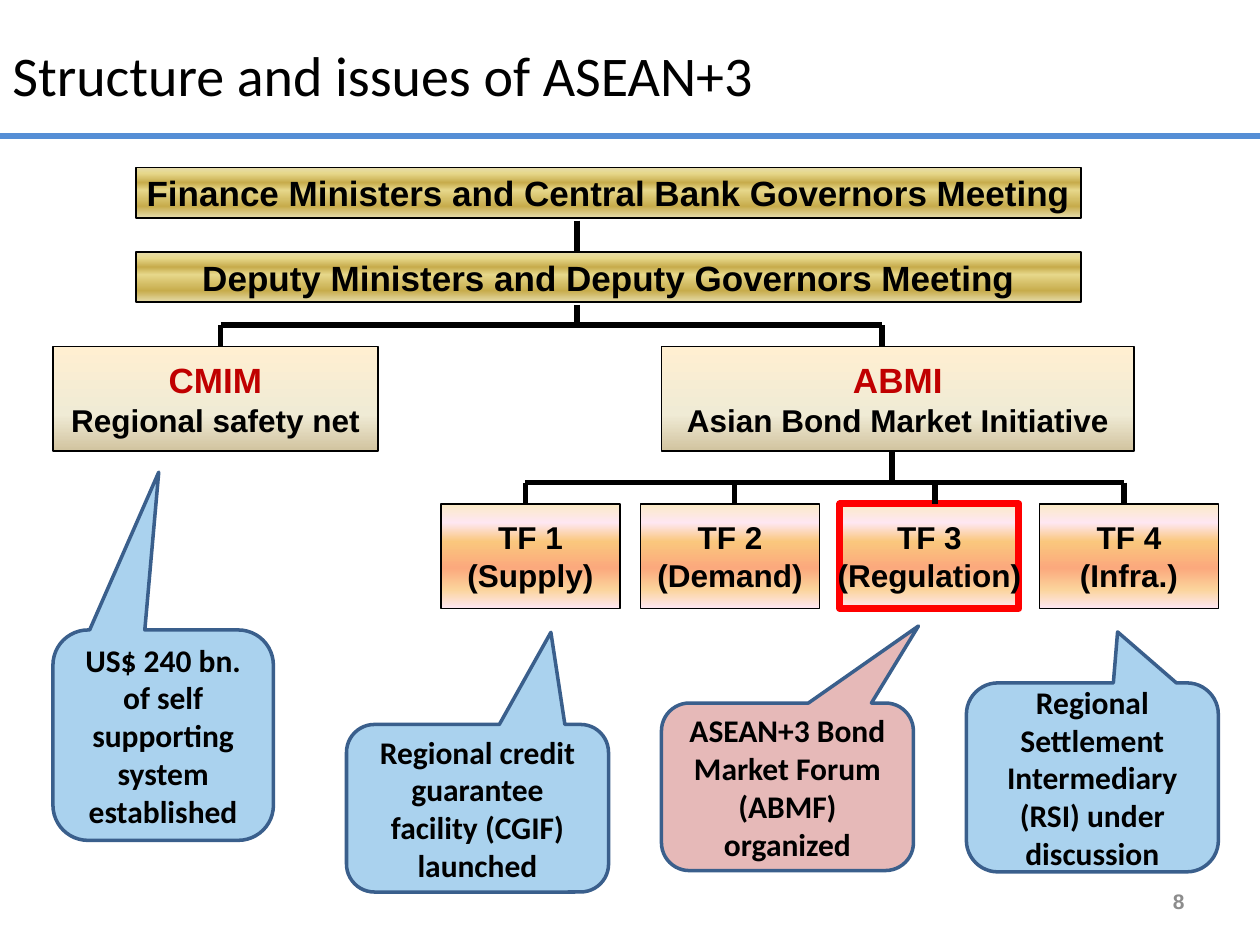
import pptx
import pptx.dml.color
import pptx.enum.shapes
import pptx.enum.text
import pptx.oxml
import pptx.oxml.ns
import pptx.util
from lxml import etree
from pptx.util import Inches

SHAPE = pptx.enum.shapes.MSO_SHAPE
ALIGN = pptx.enum.text.PP_ALIGN
MIDDLE = pptx.enum.text.MSO_ANCHOR.MIDDLE
qn = pptx.oxml.ns.qn

COLORS = {
    "black": "000000", "gray": "8C8C8C", "rule": "558ED5",
    "heading": "C00000", "highlight": "FF0000",
    "blue": "AAD2EE", "pink": "E6B9B8", "callout_line": "3A5F8C",
}
GRADIENTS = {  # (position in percent, colour), top to bottom
    "gold": [(0, "E6DCAC"), (12, "E6D78A"), (30, "C7AC4C"),
             (45, "E6D78A"), (77, "C7AC4C"), (100, "E6DCAC")],
    "parchment": [(0, "FFEFD1"), (65, "F0EBD5"), (100, "D1C39F")],
    "sunset": [(0, "FBEAC7"), (18, "FEE7F2"), (36, "FAC77D"),
               (61, "FBA97D"), (82, "FBD49C"), (100, "FEE7F2")],
}


def rgb(name):
    return pptx.dml.color.RGBColor.from_string(COLORS[name])


def set_outline(shape, color, width):
    shape.line.color.rgb = rgb(color)
    shape.line.width = pptx.util.Pt(width)


def fill_gradient(shape, stops):
    """Fill with any number of stops, running downwards."""
    shape.fill.gradient()
    gradient = shape._element.spPr.find(qn("a:gradFill"))
    stop_list = gradient.find(qn("a:gsLst"))
    for stop in list(stop_list):
        stop_list.remove(stop)
    for position, color in stops:
        stop = etree.SubElement(stop_list, qn("a:gs"), pos=str(position * 1000))
        etree.SubElement(stop, qn("a:srgbClr"), val=color)
    gradient.find(qn("a:lin")).set("ang", "5400000")


def write(shape, lines, font="Arial", align=ALIGN.CENTER, bold=True, wrap=True):
    """Write one paragraph for each (text, size, color)."""
    frame = shape.text_frame
    frame.word_wrap = wrap
    frame.vertical_anchor = MIDDLE
    for index, (text, size, color) in enumerate(lines):
        paragraph = frame.add_paragraph() if index else frame.paragraphs[0]
        paragraph.text = text
        paragraph.alignment = align
        paragraph.font.name = font
        paragraph.font.size = pptx.util.Pt(size)
        paragraph.font.bold = bold
        paragraph.font.color.rgb = rgb(color)


def add_line(slide, x1, y1, x2, y2, color="black"):
    line = slide.shapes.add_connector(
        pptx.enum.shapes.MSO_CONNECTOR.STRAIGHT,
        Inches(x1), Inches(y1), Inches(x2), Inches(y2))
    set_outline(line, color, 3)
    etree.SubElement(line._element.spPr, qn("a:effectLst"))


def add_text(slide, box, lines, **style):
    write(slide.shapes.add_textbox(*map(Inches, box)), lines, **style)


def add_header(slide, left, top, width, height):
    add_text(slide, (left, top + 0.25, width - 0.5, 0.67),
             [("Structure and issues of ASEAN+3", 32, "black")],
             font="Calibri", align=ALIGN.LEFT, bold=False)
    add_line(slide, left, top + height, left + width, top + height, "rule")


def add_body(slide, box, gradient, lines, outline=("black", 1)):
    """Add the box of one body in the organisation chart."""
    body = slide.shapes.add_shape(SHAPE.RECTANGLE, *map(Inches, box))
    body.shadow.inherit = False
    fill_gradient(body, GRADIENTS[gradient])
    set_outline(body, *outline)
    write(body, lines, wrap=False)


def add_meetings(slide, left, top, width, height):
    row_height = 0.4
    meetings = ["Finance Ministers and Central Bank Governors Meeting",
                "Deputy Ministers and Deputy Governors Meeting"]
    for index, meeting in enumerate(meetings):
        row_top = top + index * (height - row_height)
        add_body(slide, (left, row_top, width, row_height), "gold",
                 [(meeting, 20, "black")])
    add_line(slide, left + 3.5, top + 0.42, left + 3.5, top + 0.66)


def add_initiatives(slide, left, top, width, height):
    initiatives = [("CMIM", "Regional safety net", 0, 2.58),
                   ("ABMI", "Asian Bond Market Initiative", width - 3.75, 3.75)]
    for name, purpose, offset, box_width in initiatives:
        add_body(slide, (left + offset, top, box_width, height), "parchment",
                 [(name, 20, "heading"), (purpose, 18, "black")])


def add_task_forces(slide, left, top, width, height):
    box_width = 1.42
    pitch = (width - box_width) / 3
    for index, topic in enumerate(["Supply", "Demand", "Regulation", "Infra."]):
        outline = ("highlight", 4) if topic == "Regulation" else ("black", 1)
        add_body(slide, (left + index * pitch, top, box_width, height), "sunset",
                 [(f"TF {index + 1}", 18, "black"), (f"({topic})", 18, "black")],
                 outline)


def add_branches(slide, trunk_x, top, bar_y, bottom, branch_xs):
    """Join a trunk to its branches through a horizontal bar."""
    add_line(slide, branch_xs[0], bar_y, branch_xs[-1], bar_y)
    add_line(slide, trunk_x, top, trunk_x, bar_y)
    for x in branch_xs:
        add_line(slide, x, bar_y, x, bottom)


def add_callout(slide, box, tip, color, text):
    """Add a speech bubble; tip is its offset from the centre, in box sizes."""
    callout = slide.shapes.add_shape(
        SHAPE.ROUNDED_RECTANGULAR_CALLOUT, *map(Inches, box))
    callout.shadow.inherit = False
    callout.adjustments[0], callout.adjustments[1] = tip
    callout.fill.solid()
    callout.fill.fore_color.rgb = rgb(color)
    set_outline(callout, "callout_line", 2)
    write(callout, [(text, 18, "black")], font="Calibri")


def main():
    deck = pptx.Presentation()
    deck.slide_width, deck.slide_height = Inches(10), Inches(7.5)
    slide = deck.slides.add_slide(deck.slide_layouts[6])

    add_text(slide, (7.17, 6.95, 2.33, 0.4), [("8", 12, "gray")],
             align=ALIGN.RIGHT)
    add_header(slide, 0, 0, 10, 1.08)
    add_meetings(slide, 1.08, 1.33, 7.5, 1.07)
    add_initiatives(slide, 0.42, 2.75, 8.58, 0.83)
    add_task_forces(slide, 3.5, 4, 6.17, 0.83)
    add_branches(slide, 4.58, 2.42, 2.58, 2.75, [1.75, 7])
    add_branches(slide, 7.08, 3.58, 3.83, 4, [4.17, 5.83, 7.42, 8.92])

    callouts = [
        ((0.42, 5, 1.75, 1.67), (-0.02, -1.25), "blue",
         "US$ 240 bn. of self supporting system established"),
        ((2.75, 5.75, 2.08, 1.33), (0.28, -1.05), "blue",
         "Regional credit guarantee facility (CGIF) launched"),
        ((5.25, 5.58, 2, 1.33), (0.52, -0.96), "pink",
         "ASEAN+3 Bond Market Forum (ABMF) organized"),
        ((7.67, 5.42, 2, 1.5), (0.1, -0.77), "blue",
         "Regional Settlement Intermediary (RSI) under discussion"),
    ]
    for callout in callouts:
        add_callout(slide, *callout)
    deck.save("out.pptx")


if __name__ == "__main__":
    main()
